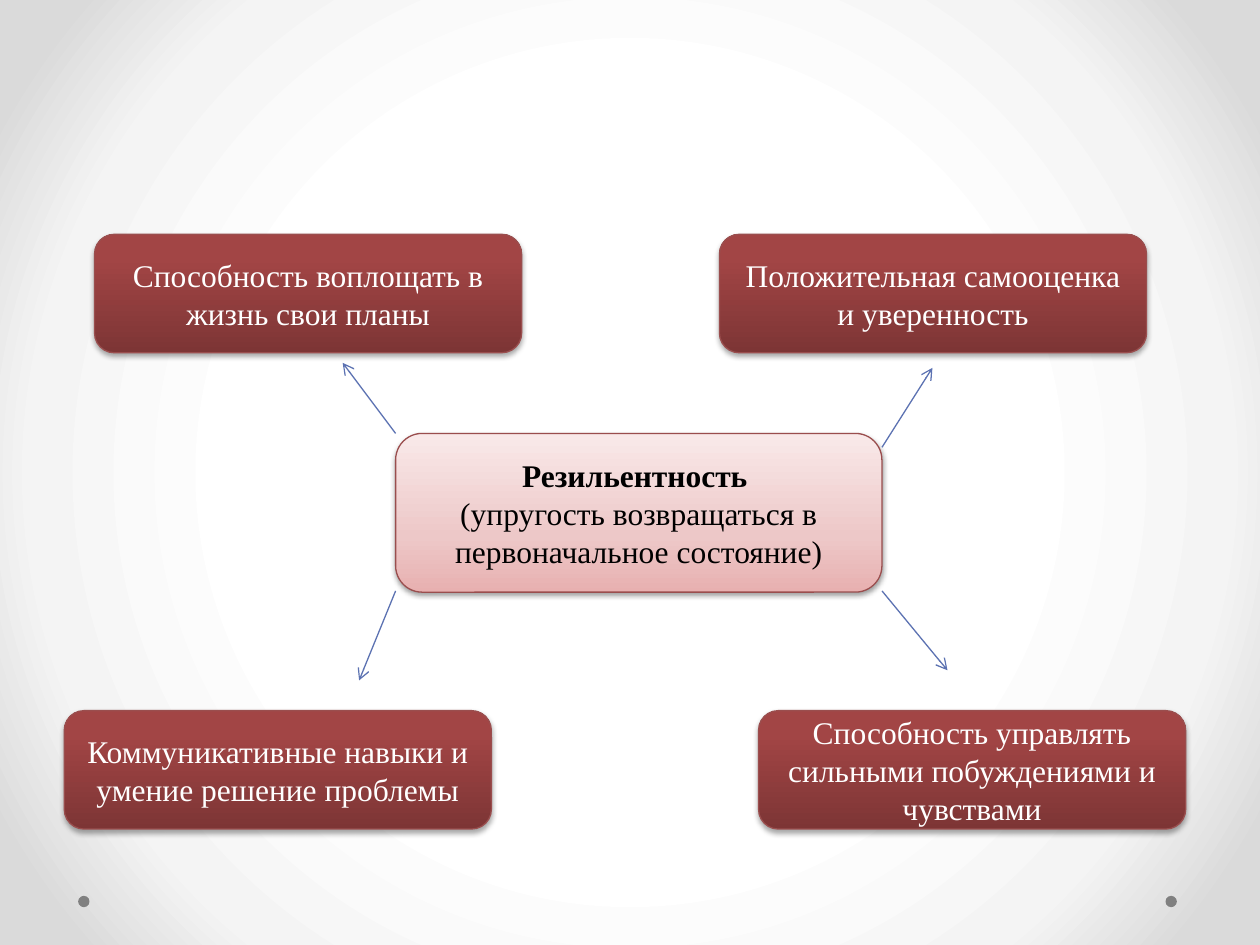
from dataclasses import dataclass

from lxml.etree import SubElement
from pptx import Presentation
from pptx.dml.color import RGBColor
from pptx.enum.shapes import MSO_CONNECTOR, MSO_SHAPE
from pptx.enum.text import MSO_ANCHOR, PP_ALIGN
from pptx.oxml.ns import qn
from pptx.util import Inches, Pt


@dataclass(frozen=True)
class Theme:
    font: str = "Times New Roman"
    text_size: int = 18
    line_width: float = 0.75
    light_text: str = "FFFFFF"
    dark_text: str = "000000"
    outline: str = "9A4E4E"
    arrow: str = "5C72B2"
    dot: str = "808080"
    shadow: str = "000000"
    backdrop: tuple = ((50, "FFFFFF"), (76, "F4F4F4"), (92, "DADADA"))
    center_fill: tuple = ((0, "E8B0B0"), (35, "EDC8C8"), (100, "F9E9E9"))
    quality_fill: tuple = ((0, "7D3535"), (80, "A24545"), (100, "A44343"))


THEME = Theme()
QUALITY_SIZE = (3.39, 0.94)
QUALITIES = [
    (0.75, 1.86, "Способность воплощать в жизнь свои планы"),
    (5.71, 1.86, "Положительная самооценка и уверенность"),
    (0.51, 5.64, "Коммуникативные навыки и умение решение проблемы"),
    (6.02, 5.64, "Способность управлять сильными побуждениями и чувствами"),
]
ARROWS = [
    ((3.14, 3.44), (2.72, 2.88)),
    ((7, 3.55), (7.4, 2.92)),
    ((7, 4.69), (7.52, 5.32)),
    ((3.14, 4.69), (2.85, 5.4)),
]


def rgb(color):
    return RGBColor.from_string(color)


def add_xml(parent, tag, **attributes):
    return SubElement(parent, qn(tag), {key: str(value) for key, value in attributes.items()})


def set_gradient(fill, properties, stops, circular=False):
    """Swap the solid fill in properties for a gradient, circular or rising from the bottom."""
    fill.solid()
    solid = properties.find(qn("a:solidFill"))
    gradient = add_xml(properties, "a:gradFill", rotWithShape=1)
    properties.replace(solid, gradient)
    stop_list = add_xml(gradient, "a:gsLst")
    for position, color in stops:
        stop = add_xml(stop_list, "a:gs", pos=position * 1000)
        add_xml(stop, "a:srgbClr", val=color)
    if circular:
        shade = add_xml(gradient, "a:path", path="circle")
        add_xml(shade, "a:fillToRect", l=50000, t=50000, r=50000, b=50000)
    else:
        add_xml(gradient, "a:lin", ang=270 * 60000, scaled=0)


def set_shadow(shape, opacity, distance):
    shape.shadow.inherit = False
    effects = shape._element.spPr.find(qn("a:effectLst"))
    shadow = add_xml(effects, "a:outerShdw", blurRad=Pt(3.1), dist=Pt(distance),
                     dir=90 * 60000, rotWithShape=0)
    color = add_xml(shadow, "a:srgbClr", val=THEME.shadow)
    add_xml(color, "a:alpha", val=opacity * 1000)


def set_background(page):
    fill = page.background.fill
    fill.solid()
    properties = next(page._element.iter(qn("p:bgPr")))
    set_gradient(fill, properties, THEME.backdrop, circular=True)


def add_dot(page, left):
    dot = page.shapes.add_shape(MSO_SHAPE.OVAL, Inches(left), Inches(7.11),
                                Inches(0.09), Inches(0.09))
    dot.shadow.inherit = False
    dot.fill.solid()
    dot.fill.fore_color.rgb = rgb(THEME.dot)
    dot.line.fill.background()


def add_box(page, kind, place, stops, shadow, color, lines):
    """Add a shaded box; lines holds (text, bold) pairs, one for each paragraph."""
    box = page.shapes.add_shape(kind, *(Inches(length) for length in place))
    set_gradient(box.fill, box._element.spPr, stops)
    box.line.color.rgb = rgb(THEME.outline)
    box.line.width = Pt(THEME.line_width)
    set_shadow(box, *shadow)
    frame = box.text_frame
    frame.word_wrap = True
    frame.vertical_anchor = MSO_ANCHOR.MIDDLE
    for index, (text, bold) in enumerate(lines):
        para = frame.add_paragraph() if index else frame.paragraphs[0]
        para.alignment = PP_ALIGN.CENTER
        span = para.add_run()
        span.text = text
        span.font.name = THEME.font
        span.font.size = Pt(THEME.text_size)
        span.font.bold = bold
        span.font.color.rgb = rgb(color)


def add_arrow(page, start, end):
    arrow = page.shapes.add_connector(
        MSO_CONNECTOR.STRAIGHT, *(Inches(length) for length in start + end))
    arrow.line.color.rgb = rgb(THEME.arrow)
    arrow.line.width = Pt(THEME.line_width)
    add_xml(arrow.line._get_or_add_ln(), "a:tailEnd", type="arrow")
    add_xml(arrow._element.spPr, "a:effectLst")


def main():
    deck = Presentation()
    deck.slide_width, deck.slide_height = Inches(10), Inches(7.5)
    page = deck.slides.add_slide(deck.slide_layouts[6])
    set_background(page)
    for left in (9.25, 0.62):
        add_dot(page, left)
    add_box(page, MSO_SHAPE.FLOWCHART_ALTERNATE_PROCESS, (3.14, 3.44, 3.86, 1.26),
            THEME.center_fill, (38, 1.6), THEME.dark_text,
            [("Резильентность ", True),
             ("(упругость возвращаться в первоначальное состояние)", False)])
    for left, top, text in QUALITIES:
        add_box(page, MSO_SHAPE.ROUNDED_RECTANGLE, (left, top, *QUALITY_SIZE),
                THEME.quality_fill, (35, 1.8), THEME.light_text, [(text, False)])
    for start, end in ARROWS:
        add_arrow(page, start, end)
    deck.save("out.pptx")


if __name__ == "__main__":
    main()
